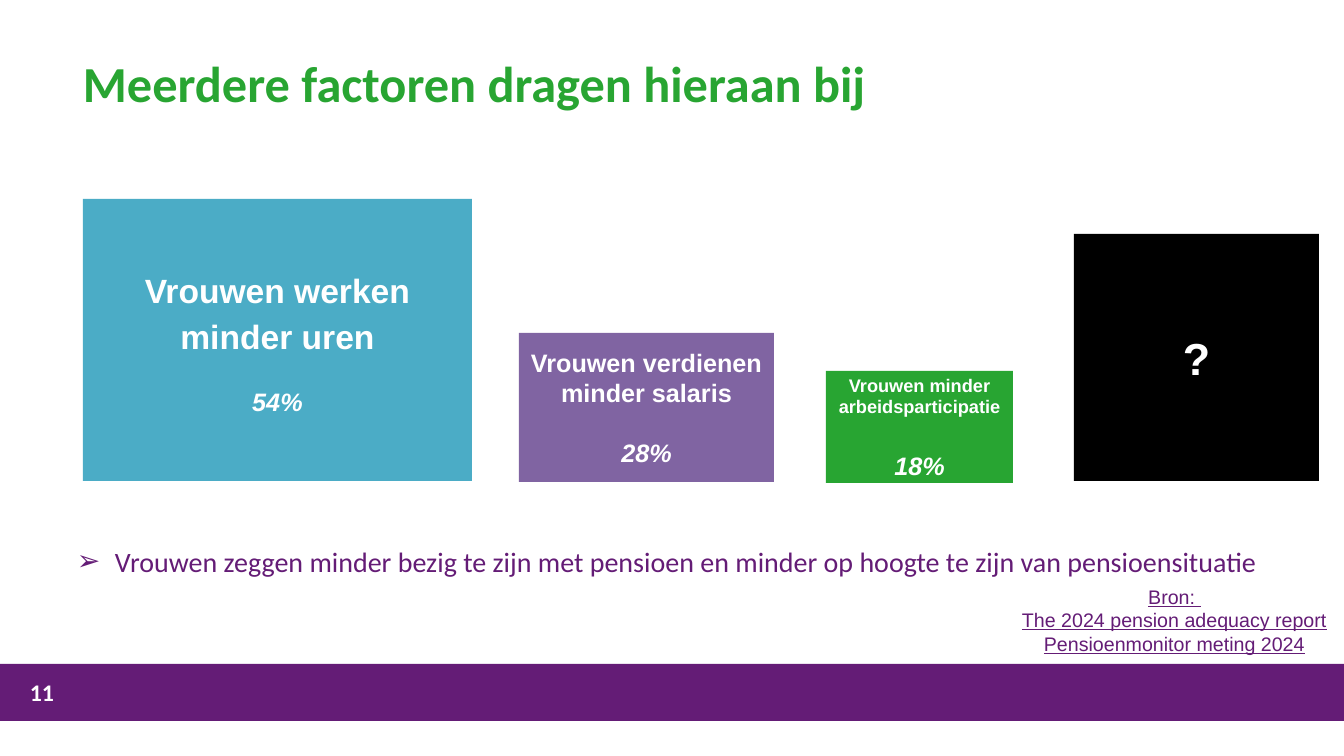
from dataclasses import dataclass

from lxml import etree
from pptx import Presentation
from pptx.dml.color import RGBColor
from pptx.enum.shapes import MSO_SHAPE
from pptx.enum.text import MSO_ANCHOR, PP_ALIGN
from pptx.oxml.ns import qn
from pptx.util import Emu, Inches, Pt

RECTANGLE = MSO_SHAPE.RECTANGLE
TOP, MIDDLE, BOTTOM = MSO_ANCHOR.TOP, MSO_ANCHOR.MIDDLE, MSO_ANCHOR.BOTTOM
LEFT, CENTER = PP_ALIGN.LEFT, PP_ALIGN.CENTER
PX = Inches(1) / 100.8


@dataclass(frozen=True)
class Theme:
    purple: str = "641C76"
    green: str = "28A532"
    teal: str = "4BACC6"
    violet: str = "8064A2"
    black: str = "000000"
    white: str = "FFFFFF"
    heading_font: str = "Calibri"
    body_font: str = "Arial"
    title_size: int = 36
    question_size: int = 32
    large_size: int = 24
    bullet_size: int = 20
    medium_size: int = 18
    number_size: int = 17
    source_size: int = 14
    small_size: int = 13


theme = Theme()
presentation = Presentation()
presentation.slide_width = Emu(round(1344 * PX))
presentation.slide_height = Emu(round(756 * PX))
slide = presentation.slides.add_slide(presentation.slide_layouts[6])


def add_box(bounds, fill=None):
    """Add a filled rectangle, or a text box when no fill is given."""
    lengths = [Emu(round(length * PX)) for length in bounds]
    if fill is None:
        shape = slide.shapes.add_textbox(*lengths)
    else:
        shape = slide.shapes.add_shape(RECTANGLE, *lengths)
        shape.shadow.inherit = False
        shape.fill.solid()
        shape.fill.fore_color.rgb = RGBColor.from_string(fill)
        shape.line.fill.background()
    shape.text_frame.word_wrap = True
    return shape


def write(shape, text, size, color, font, bold=False, anchor=TOP, align=LEFT, spacing=1.0):
    """Fill a shape with evenly formatted text, one paragraph per line."""
    text_frame = shape.text_frame
    text_frame.text = text
    text_frame.vertical_anchor = anchor
    for paragraph in text_frame.paragraphs:
        paragraph.alignment = align
        paragraph.line_spacing = spacing
        for run in paragraph.runs:
            run.font.size = Pt(size)
            run.font.name = font
            run.font.bold = bold
            run.font.color.rgb = RGBColor.from_string(color)
    return text_frame


# Footer
add_box((0, 664, 1344, 57), theme.purple)
write(add_box((20, 671, 75, 40)), "11", theme.number_size, theme.white,
      theme.heading_font, bold=True, anchor=BOTTOM)

# Title
title = write(add_box((83, 59, 1207, 112)), "Meerdere factoren dragen hieraan bij",
              theme.title_size, theme.green, theme.heading_font, bold=True, spacing=0.9)
title.margin_left = title.margin_top = title.margin_right = title.margin_bottom = 0

# Factors: bounds, fill, label, share, label size, line spacing, gap above share
factors = [
    ((83, 199, 389, 282), theme.teal, "Vrouwen werken minder uren", "54%",
     theme.large_size, 1.15, 18),
    ((519, 333, 255, 149), theme.violet, "Vrouwen verdienen minder salaris", "28%",
     theme.medium_size, 1.0, 21),
    ((826, 371, 187, 112), theme.green, "Vrouwen minder arbeidsparticipatie", "18%",
     theme.small_size, 1.0, 23),
]
for bounds, fill, label, share, size, spacing, gap in factors:
    text_frame = write(add_box(bounds, fill), f"{label}\n{share}", size, theme.white,
                       theme.body_font, bold=True, anchor=MIDDLE, align=CENTER,
                       spacing=spacing)
    share_paragraph = text_frame.paragraphs[1]
    share_paragraph.space_before = Pt(gap)
    share_paragraph.runs[0].font.size = Pt(theme.medium_size)
    share_paragraph.runs[0].font.italic = True

write(add_box((1074, 234, 245, 247), theme.black), "?", theme.question_size, theme.white,
      theme.body_font, bold=True, anchor=MIDDLE, align=CENTER)

# Conclusion
conclusion = write(
    add_box((17, 543, 1327, 60)),
    "Vrouwen zeggen minder bezig te zijn met pensioen en minder op hoogte te zijn "
    "van pensioensituatie",
    theme.bullet_size, theme.purple, theme.heading_font, spacing=0.9)
properties = conclusion.paragraphs[0]._p.get_or_add_pPr()
properties.set("marL", str(round(88 * PX)))
properties.set("indent", str(round(-38 * PX)))
etree.SubElement(properties, qn("a:buFont")).set("typeface", theme.body_font)
etree.SubElement(properties, qn("a:buChar")).set("char", "➢")

# Sources
sources = write(add_box((1005, 616, 339, 44)),
                "Bron: \nThe 2024 pension adequacy report\nPensioenmonitor meting 2024",
                theme.source_size, theme.purple, theme.body_font, anchor=BOTTOM, align=CENTER)
for paragraph in sources.paragraphs:
    paragraph.runs[0].font.underline = True

presentation.save("out.pptx")
